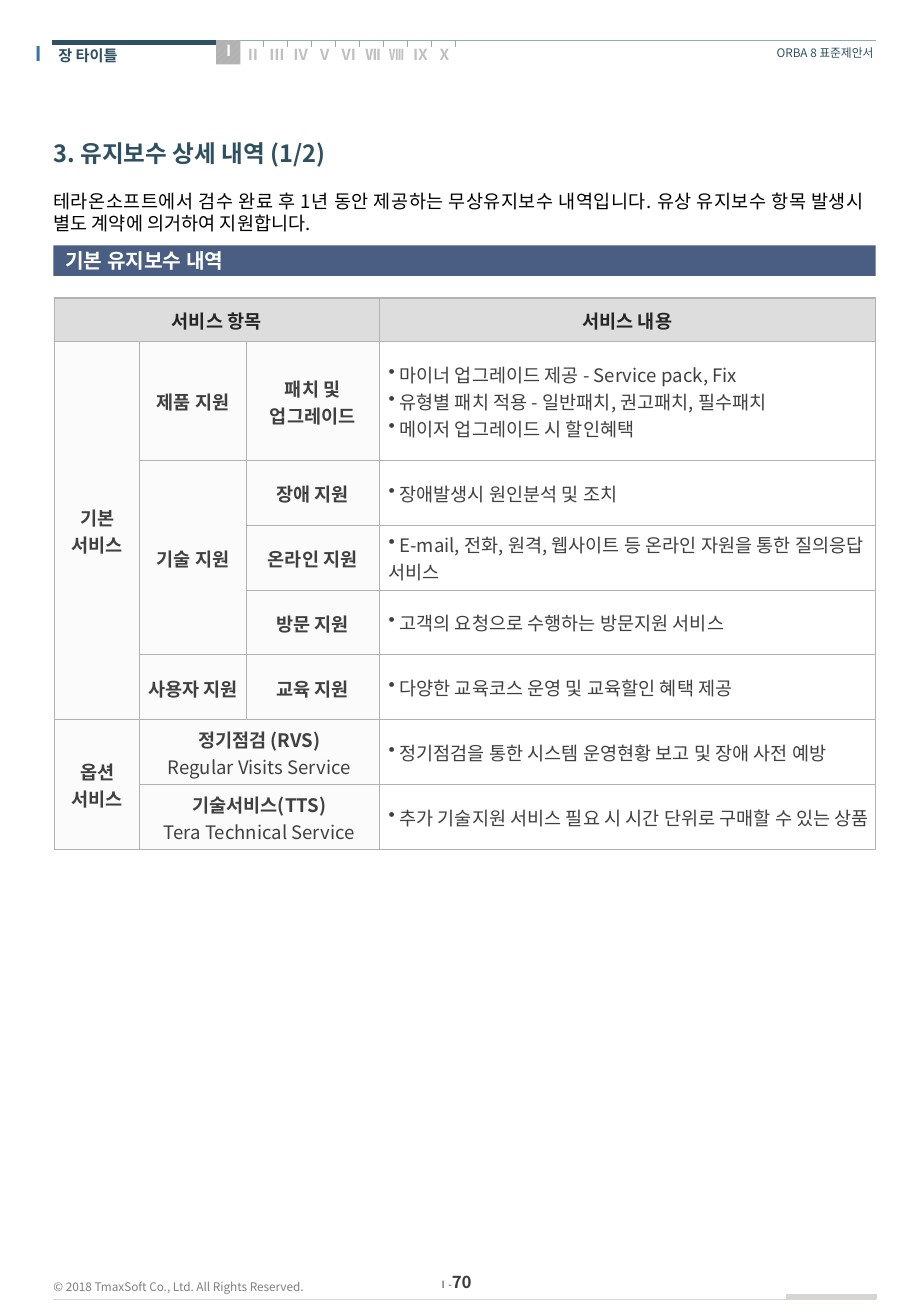
from lxml import etree
from pptx import Presentation
from pptx import util as u
from pptx.dml.color import RGBColor
from pptx.enum import dml, shapes, text
from pptx.oxml import ns

FONT = "Noto Sans CJK KR"
NAVY = RGBColor(0x2E, 0x50, 0x61)
BLUE = RGBColor(0x3D, 0x74, 0xAB)
BAR_BLUE = RGBColor(0x4A, 0x5D, 0x82)
RULE_BLUE = RGBColor(0x8C, 0xAE, 0xBA)
BLACK = RGBColor(0, 0, 0)
WHITE = RGBColor(0xFF, 0xFF, 0xFF)
INK = RGBColor(0x26, 0x26, 0x26)
BODY_INK = RGBColor(0x40, 0x40, 0x40)
PAGE_INK = RGBColor(0x3D, 0x3D, 0x3D)
GRAY = RGBColor(0x80, 0x80, 0x80)
NUMERAL_GRAY = RGBColor(0xC0, 0xC0, 0xC0)
BORDER = RGBColor(0xB2, 0xB2, 0xB2)
FOOT_RULE = RGBColor(0xD6, 0xD5, 0xD4)
HEAD_FILL = RGBColor(0xDD, 0xDD, 0xDD)
LABEL_FILL = RGBColor(0xFB, 0xFB, 0xFB)

# Page grid: one unit is a tenth of an inch
UNIT = u.Inches(0.1)
LEFT, RIGHT, WIDTH = 4.4, 72.1, 67.7
CHAPTERS = "ⅡⅢⅣⅤⅥⅦⅧⅨⅩ"
CHAPTER_STEP = 1.97

COLUMNS = [7, 8.8, 10.9, 40.9]
ROWS = [3.6, 9.8] + [32 / 6] * 6

# Label cells: row, column, rows spanned, columns spanned, lines
LABELS = [
    (1, 0, 5, 1, ["기본", "서비스"]),
    (1, 1, 1, 1, ["제품 지원"]),
    (1, 2, 1, 1, ["패치 및", "업그레이드"]),
    (2, 1, 3, 1, ["기술 지원"]),
    (2, 2, 1, 1, ["장애 지원"]),
    (3, 2, 1, 1, ["온라인 지원"]),
    (4, 2, 1, 1, ["방문 지원"]),
    (5, 1, 1, 1, ["사용자 지원"]),
    (5, 2, 1, 1, ["교육 지원"]),
    (6, 0, 2, 1, ["옵션", "서비스"]),
    (6, 1, 1, 2, ["정기점검 (RVS)", [("Regular Visits Service", {"bold": False})]]),
    (7, 1, 1, 2, ["기술서비스(TTS)", [("Tera Technical Service", {"bold": False})]]),
]
DETAILS = [
    ["마이너 업그레이드 제공 - Service pack, Fix",
     "유형별 패치 적용 - 일반패치, 권고패치, 필수패치",
     "메이저 업그레이드 시 할인혜택"],
    ["장애발생시 원인분석 및 조치"],
    ["E-mail, 전화, 원격, 웹사이트 등 온라인 자원을 통한 질의응답 서비스"],
    ["고객의 요청으로 수행하는 방문지원 서비스"],
    ["다양한 교육코스 운영 및 교육할인 혜택 제공"],
    ["정기점검을 통한 시스템 운영현황 보고 및 장애 사전 예방"],
    ["추가 기술지원 서비스 필요 시 시간 단위로 구매할 수 있는 상품"],
]


def grid(*values):
    return [round(value * UNIT) for value in values]


def format_span(span, size, color, bold=False):
    span.font.size = u.Pt(size)
    span.font.bold = bold
    span.font.color.rgb = color
    span.font.name = FONT
    east_asian = etree.SubElement(span.font._element, ns.qn("a:ea"))
    east_asian.set("typeface", FONT)


def write(frame, lines, align="LEFT", spacing=1.0, bullet=False, **style):
    """Each line is a string or a list of (words, style changes)."""
    for index, line in enumerate(lines):
        para = frame.paragraphs[0] if index == 0 else frame.add_paragraph()
        para.alignment = getattr(text.PP_ALIGN, align)
        para.line_spacing = spacing
        if bullet:
            properties = para._p.get_or_add_pPr()
            properties.set("marL", "0")
            properties.set("indent", "0")
            etree.SubElement(properties, ns.qn("a:buChar")).set("char", "•")
            line = " " + line
        for words, changes in [(line, {})] if isinstance(line, str) else line:
            span = para.add_run()
            span.text = words
            format_span(span, **{**style, **changes})


def set_margins(holder, left=0, top=0, right=0, bottom=0):
    holder.margin_left, holder.margin_top = grid(left, top)
    holder.margin_right, holder.margin_bottom = grid(right, bottom)


def add_text(page, area, lines, wrap=True, anchor="TOP", **style):
    frame = page.shapes.add_textbox(*grid(*area)).text_frame
    set_margins(frame)
    frame.word_wrap = wrap
    frame.vertical_anchor = getattr(text.MSO_ANCHOR, anchor)
    write(frame, lines, **style)


def add_rule(page, start, end, color, weight):
    rule = page.shapes.add_connector(shapes.MSO_CONNECTOR.STRAIGHT, *grid(*start, *end))
    rule.line.color.rgb = color
    rule.line.width = u.Pt(weight)
    etree.SubElement(rule._element.spPr, ns.qn("a:effectLst"))


def add_block(page, area):
    block = page.shapes.add_shape(shapes.MSO_SHAPE.RECTANGLE, *grid(*area))
    block.shadow.inherit = False
    block.line.fill.background()
    return block


def set_borders(cell, top):
    properties = cell._tc.get_or_add_tcPr()
    for index, (side, weight) in enumerate([("L", 0.5), ("R", 0.5), ("T", top), ("B", 0.5)]):
        edge = etree.Element(ns.qn(f"a:ln{side}"), w=str(u.Pt(weight)))
        fill = etree.SubElement(edge, ns.qn("a:solidFill"))
        etree.SubElement(fill, ns.qn("a:srgbClr")).set("val", str(BORDER))
        properties.insert(index, edge)


def fill_cell(cell, lines, fill, **style):
    cell.fill.solid()
    cell.fill.fore_color.rgb = fill
    cell.vertical_anchor = text.MSO_ANCHOR.MIDDLE
    if style.get("bullet"):
        set_margins(cell, 0.8, 0.4, 0.1, 0.4)
    else:
        set_margins(cell, 0.1, 0.1, 0.1, 0)
    write(cell.text_frame, lines, size=11, **style)


def add_header(page):
    add_rule(page, (RIGHT, 3.3), (LEFT, 3.3), RULE_BLUE, 0.3)
    add_rule(page, (17.8, 3.5), (4.3, 3.5), NAVY, 3.5)
    add_text(page, (4.8, 3.8, 12.8, 1.5), ["장 타이틀"], size=9, color=NAVY, bold=True)
    add_text(page, (60, 3.8, 11.9, 1.2), ["ORBA 8 표준제안서"], align="RIGHT", size=7, color=NAVY)
    add_text(page, (2.2, 3.4, 2, 2.2), ["Ⅰ"], align="CENTER", size=12, color=BLUE, bold=True)
    # Chapter index, with the current chapter on a hatched tab
    tab = add_block(page, (17.8, 3.3, 2, 2))
    tab.fill.patterned()
    tab.fill.pattern = dml.MSO_PATTERN.WIDE_UPWARD_DIAGONAL
    tab.fill.fore_color.rgb = NUMERAL_GRAY
    tab.fill.back_color.rgb = BORDER
    add_text(page, (18.2, 3.4, 1.9, 1.5), ["Ⅰ"], size=9, color=WHITE, bold=True)
    for index, numeral in enumerate(CHAPTERS):
        offset = index * CHAPTER_STEP
        add_text(page, (20.2 + offset, 3.7, 1.9, 1.5), [numeral],
                 size=9, color=NUMERAL_GRAY, bold=True)
        add_rule(page, (21.7 + offset, 3.3), (21.7 + offset, 3.9), RULE_BLUE, 0.3)


def add_footer(page):
    add_text(page, (35, 104.6, 4.9, 1.7), [[("Ⅰ-", {"size": 6}), ("70", {"bold": True})]],
             anchor="MIDDLE", align="CENTER", size=10, color=PAGE_INK)
    add_text(page, (LEFT, 104.7, 23.2, 2.4), ["© 2018 TmaxSoft Co., Ltd. All Rights Reserved."],
             anchor="MIDDLE", size=7, color=GRAY)
    add_rule(page, (RIGHT, 106.9), (LEFT, 106.9), FOOT_RULE, 0.3)
    add_rule(page, (72.2, 106.7), (64.7, 106.7), FOOT_RULE, 3.5)


def add_intro(page):
    add_text(page, (LEFT, 11.2, WIDTH, 3.1), ["3. 유지보수 상세 내역 (1/2)"],
             spacing=1.1, size=14, color=NAVY, bold=True)
    add_text(page, (LEFT, 15.6, WIDTH - 1, 4.5),
             ["테라온소프트에서 검수 완료 후 1년 동안 제공하는 무상유지보수 내역입니다. "
              "유상 유지보수 항목 발생시 별도 계약에 의거하여 지원합니다."],
             align="JUSTIFY", size=11, color=BLACK)
    bar = add_block(page, (LEFT, 20.2, WIDTH, 2.5))
    bar.fill.solid()
    bar.fill.fore_color.rgb = BAR_BLUE
    set_margins(bar.text_frame, left=1, right=1)
    bar.text_frame.vertical_anchor = text.MSO_ANCHOR.MIDDLE
    write(bar.text_frame, ["기본 유지보수 내역"], size=12, color=WHITE, bold=True)


def add_service_table(page):
    area = grid(4.5, 24.5, sum(COLUMNS), sum(ROWS))
    table = page.shapes.add_table(len(ROWS), len(COLUMNS), *area).table
    for column, width in zip(table.columns, grid(*COLUMNS)):
        column.width = width
    for row, height in zip(table.rows, grid(*ROWS)):
        row.height = height
    # Heading row
    heading = dict(fill=HEAD_FILL, align="CENTER", color=INK, bold=True)
    table.cell(0, 0).merge(table.cell(0, 2))
    fill_cell(table.cell(0, 0), ["서비스 항목"], **heading)
    fill_cell(table.cell(0, 3), ["서비스 내용"], **heading)
    # Service names and their contents
    for row, column, tall, wide, lines in LABELS:
        cell = table.cell(row, column)
        if tall * wide > 1:
            cell.merge(table.cell(row + tall - 1, column + wide - 1))
        fill_cell(cell, lines, LABEL_FILL, align="CENTER", color=BODY_INK, bold=True)
    for row, lines in enumerate(DETAILS, 1):
        fill_cell(table.cell(row, 3), lines, WHITE, bullet=True, color=BODY_INK)
    for row in range(len(ROWS)):
        for column in range(len(COLUMNS)):
            set_borders(table.cell(row, column), top=0.5 if row else 1.5)


def main():
    deck = Presentation()
    deck.slide_width, deck.slide_height = grid(75, 108.3)
    page = deck.slides.add_slide(deck.slide_layouts[6])
    add_header(page)
    add_footer(page)
    add_intro(page)
    add_service_table(page)
    deck.save("out.pptx")


if __name__ == "__main__":
    main()
